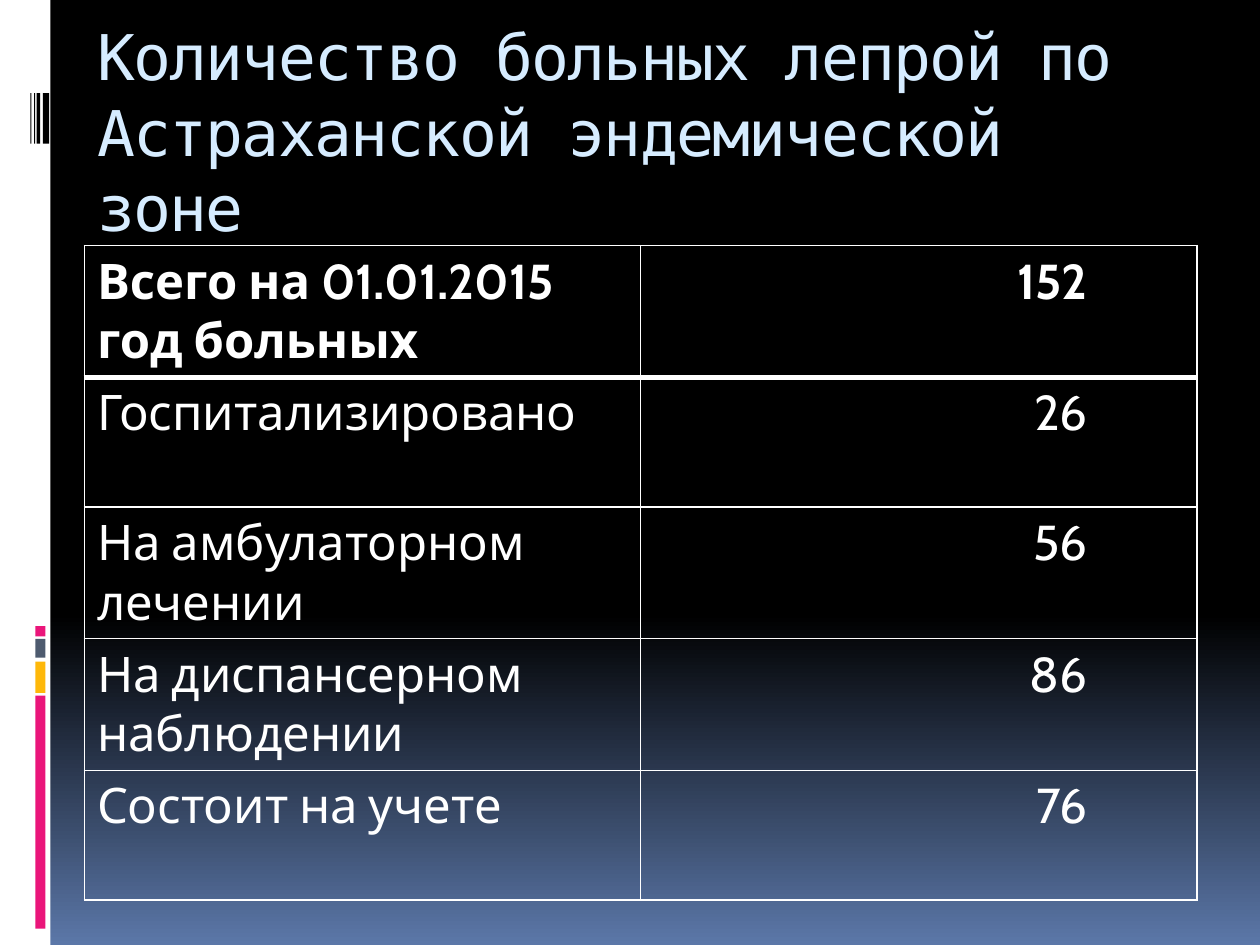
from dataclasses import dataclass

from lxml.etree import SubElement
from pptx import Presentation
from pptx.dml.color import RGBColor as Color
from pptx.enum.shapes import MSO_SHAPE as Shape
from pptx.enum.text import MSO_ANCHOR as Anchor, PP_ALIGN as Align
from pptx.oxml.ns import qn
from pptx.util import Inches, Pt

# Content
TITLE = "Количество больных лепрой по Астраханской эндемической зоне"
PATIENTS = [
    ("Всего на 01.01.2015 год больных", "152"),
    ("Госпитализировано", "26"),
    ("На амбулаторном лечении", "56"),
    ("На диспансерном наблюдении", "86"),
    ("Состоит на учете", "76"),
]


@dataclass(frozen=True)
class Theme:
    white: str = "FFFFFF"
    black: str = "000000"
    blue: str = "5B77A8"
    title: str = "D6ECFF"
    pink: str = "EA157A"
    amber: str = "FEB80A"
    slate: str = "4E5B6F"
    title_font: str = "DejaVu Sans Mono"
    body_font: str = "Cabin"
    title_size: int = 36
    body_size: int = 28


THEME = Theme()

# Layout, in inches
WIDTH, HEIGHT = 10, 7.5
LEFT, CONTENT_WIDTH = 0.67, 8.83
TITLE_TOP, TITLE_HEIGHT = 0.33, 1.42
TABLE_TOP, TABLE_HEIGHT = 1.95, 5.15
NUMBER_MARGIN = 0.87
STRIPE_TOP, STRIPE_HEIGHT = 0.74, 0.4
STRIPES = [(0.34, 0.05), (0.29, 0.03), (0.27, 0.01), (0.24, 0.01)]  # left, width
BAR_LEFT, BAR_WIDTH = 0.28, 0.08
BARS = [  # top, height, colour
    (5.52, 1.85, THEME.pink),
    (5.25, 0.25, THEME.amber),
    (5.07, 0.15, THEME.slate),
    (4.97, 0.08, THEME.pink),
]


def add_block(page, left, top, width, height, color):
    block = page.shapes.add_shape(Shape.RECTANGLE, *map(Inches, (left, top, width, height)))
    block.shadow.inherit = False
    block.fill.solid()
    block.fill.fore_color.rgb = Color.from_string(color)
    block.line.fill.background()


def style_span(span, font, size, color, bold=False):
    span.font.name = font
    span.font.size = Pt(size)
    span.font.bold = bold
    span.font.color.rgb = Color.from_string(color)


def set_borders(cell, widths):
    properties = cell._tc.get_or_add_tcPr()
    for position, (side, width) in enumerate(widths.items()):
        line = properties.makeelement(qn(f"a:ln{side}"), {"w": str(Pt(width))})
        fill = SubElement(line, qn("a:solidFill"))
        SubElement(fill, qn("a:srgbClr"), val=THEME.white)
        properties.insert(position, line)


def paint_background(page):
    fill = page.background.fill
    fill.gradient()
    fill.gradient_angle = 270
    stops = [(0.65, THEME.black), (1, THEME.blue)]
    for stop, (position, color) in zip(fill.gradient_stops, stops):
        stop.position = position
        stop.color.rgb = Color.from_string(color)


def add_side_strip(page):
    add_block(page, 0, 0, 0.4, HEIGHT, THEME.white)
    for top, height, color in BARS:
        add_block(page, BAR_LEFT, top, BAR_WIDTH, height, color)
    for left, width in STRIPES:
        add_block(page, left, STRIPE_TOP, width, STRIPE_HEIGHT, THEME.black)


def set_title(page):
    box = page.shapes.title
    box.left, box.top = Inches(LEFT), Inches(TITLE_TOP)
    box.width, box.height = Inches(CONTENT_WIDTH), Inches(TITLE_HEIGHT)
    frame = box.text_frame
    frame.text = TITLE
    frame.word_wrap = True
    frame.vertical_anchor = Anchor.MIDDLE
    para = frame.paragraphs[0]
    para.alignment = Align.LEFT
    span = para.runs[0]
    style_span(span, THEME.title_font, THEME.title_size, THEME.title)
    span.font._element.set("spc", "-100")


def add_patient_table(page):
    table = page.shapes.add_table(
        len(PATIENTS), 2, Inches(LEFT), Inches(TABLE_TOP),
        Inches(CONTENT_WIDTH), Inches(TABLE_HEIGHT),
    ).table
    table.horz_banding = False
    for row, texts in enumerate(PATIENTS):
        for column, text in enumerate(texts):
            cell = table.cell(row, column)
            cell.text = text
            cell.fill.background()
            set_borders(cell, {"L": 1, "R": 1, "T": 3 if row == 1 else 1,
                               "B": 3 if row == 0 else 1})
            para = cell.text_frame.paragraphs[0]
            style_span(para.runs[0], THEME.body_font, THEME.body_size,
                       THEME.white, bold=row == 0)
            if column == 1:
                para.alignment = Align.RIGHT
                cell.margin_right = Inches(NUMBER_MARGIN)


def main():
    deck = Presentation()
    deck.slide_width, deck.slide_height = Inches(WIDTH), Inches(HEIGHT)
    page = deck.slides.add_slide(deck.slide_layouts.get_by_name("Title Only"))
    paint_background(page)
    add_side_strip(page)
    set_title(page)
    add_patient_table(page)
    deck.save("out.pptx")


if __name__ == "__main__":
    main()
